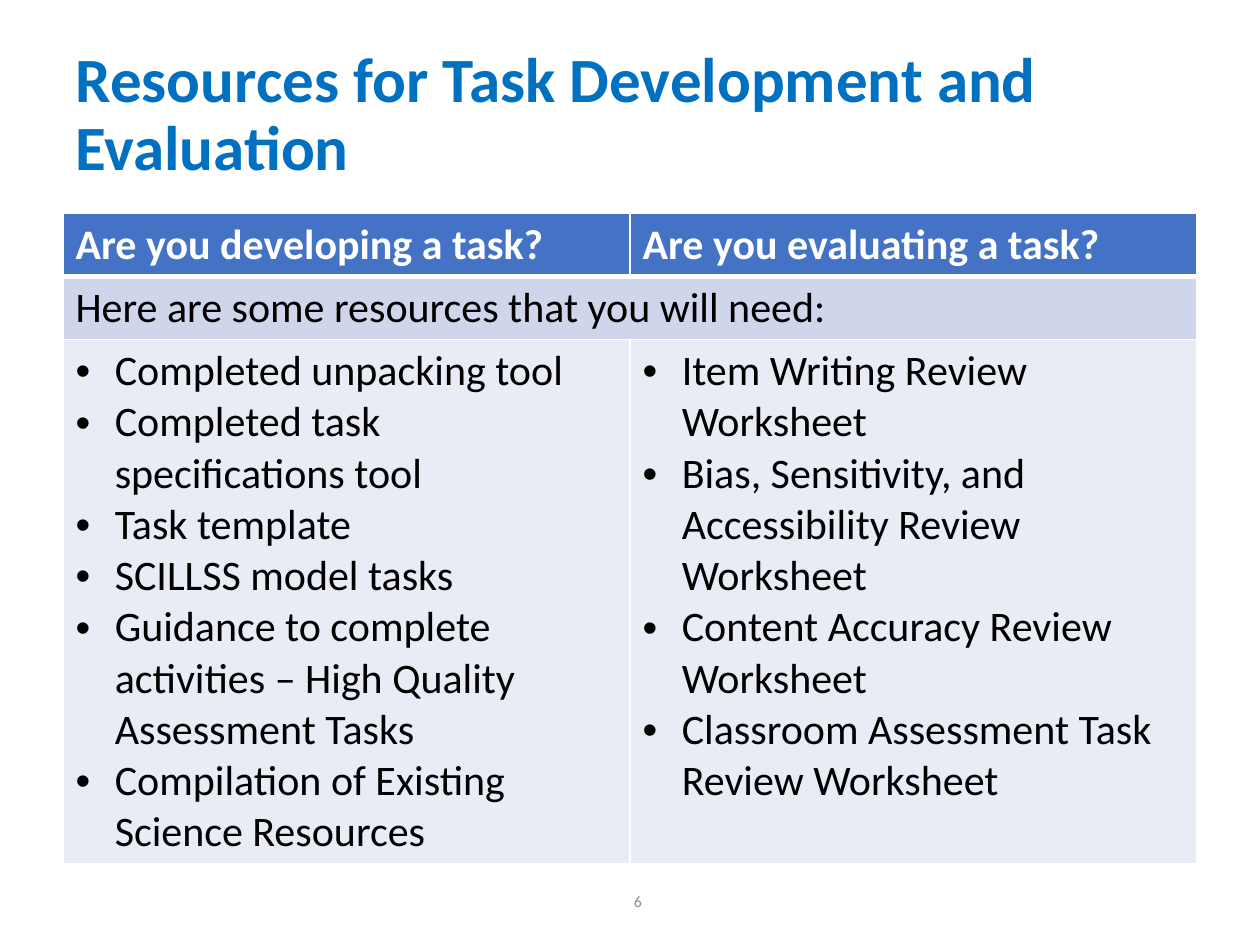
"""Builds the slide that lists resources for task development and evaluation."""
from dataclasses import dataclass

from lxml.etree import SubElement
from pptx import Presentation
from pptx.dml.color import RGBColor
from pptx.enum.text import MSO_ANCHOR as Anchor, MSO_AUTO_SIZE as AutoSize, PP_ALIGN as Align
from pptx.oxml.ns import qn
from pptx.util import Cm, Pt

FONT = "Calibri"
COLORS = {
    "title": "0070C0",
    "header": "4472C4",
    "band": "CFD5EA",
    "body": "E9EBF5",
    "white": "FFFFFF",
    "black": "000000",
    "number": "8C8C8C",
}
BULLET_INDENT = Cm(0.79)
ROW_HEIGHTS = (Cm(1.27), Cm(1.27), Cm(10.58))


@dataclass(frozen=True)
class RowStyle:
    fill: str
    color: str
    bold: bool = False
    bulleted: bool = False
    bottom_border: float = 1


@dataclass(frozen=True)
class TableRow:
    style: RowStyle
    cells: tuple[tuple[str, ...], ...]


ROWS = (
    TableRow(
        RowStyle("header", "white", bold=True, bottom_border=3),
        (("Are you developing a task?",), ("Are you evaluating a task?",)),
    ),
    TableRow(RowStyle("band", "black"), (("Here are some resources that you will need:",),)),
    TableRow(
        RowStyle("body", "black", bulleted=True),
        (
            (
                "Completed unpacking tool",
                "Completed task specifications tool",
                "Task template",
                "SCILLSS model tasks",
                "Guidance to complete activities – High Quality Assessment Tasks",
                "Compilation of Existing Science Resources",
            ),
            (
                "Item Writing Review Worksheet",
                "Bias, Sensitivity, and Accessibility Review Worksheet",
                "Content Accuracy Review Worksheet",
                "Classroom Assessment Task Review Worksheet",
            ),
        ),
    ),
)


def format_runs(paragraph, size: float, color: str, bold: bool = False) -> None:
    for run in paragraph.runs:
        run.font.name = FONT
        run.font.size = Pt(size)
        run.font.bold = bold
        run.font.color.rgb = RGBColor.from_string(COLORS[color])


def add_bullet(paragraph) -> None:
    properties = paragraph._p.get_or_add_pPr()
    properties.set("marL", str(BULLET_INDENT))
    properties.set("indent", str(-BULLET_INDENT))
    SubElement(properties, qn("a:buFont"), typeface="Arial")
    SubElement(properties, qn("a:buChar"), char="•")


def add_borders(cell, bottom: float, top: float) -> None:
    properties = cell._tc.get_or_add_tcPr()
    for side, width in (("L", 1), ("R", 1), ("T", top), ("B", bottom)):
        line = SubElement(properties, qn(f"a:ln{side}"), w=str(Pt(width)))
        fill = SubElement(line, qn("a:solidFill"))
        SubElement(fill, qn("a:srgbClr"), val=COLORS["white"])


def write_cell(cell, lines: tuple[str, ...], style: RowStyle) -> None:
    cell.text_frame.text = "\n".join(lines)
    for paragraph in cell.text_frame.paragraphs:
        if style.bulleted:
            add_bullet(paragraph)
        format_runs(paragraph, 24, style.color, style.bold)


def add_title(slide, text: str) -> None:
    title = slide.shapes.title
    title.left, title.top, title.width, title.height = Cm(1.27), Cm(0.76), Cm(22.86), Cm(3.18)
    frame = title.text_frame
    frame.text = text
    frame.auto_size = AutoSize.NONE
    frame.vertical_anchor = Anchor.MIDDLE
    paragraph = frame.paragraphs[0]
    paragraph.alignment = Align.LEFT
    paragraph.line_spacing = 0.9
    format_runs(paragraph, 36, "title", bold=True)


def add_resource_table(slide, rows: tuple[TableRow, ...]) -> None:
    table = slide.shapes.add_table(
        len(rows), 2, Cm(1.27), Cm(4.3), Cm(22.86), sum(ROW_HEIGHTS)
    ).table
    top_border = 1
    for index, (row, height) in enumerate(zip(rows, ROW_HEIGHTS)):
        table.rows[index].height = height
        cells = list(table.rows[index].cells)
        if len(row.cells) == 1:
            cells[0].merge(cells[1])
        for cell in cells:
            add_borders(cell, row.style.bottom_border, top_border)
            cell.fill.solid()
            cell.fill.fore_color.rgb = RGBColor.from_string(COLORS[row.style.fill])
        for cell, lines in zip(cells, row.cells):
            write_cell(cell, lines, row.style)
        top_border = row.style.bottom_border


def add_slide_number(slide, number: str) -> None:
    box = slide.shapes.add_textbox(Cm(7.47), Cm(17.65), Cm(5.72), Cm(1.02))
    frame = box.text_frame
    frame.word_wrap = True
    frame.vertical_anchor = Anchor.MIDDLE
    frame.text = number
    frame.paragraphs[0].alignment = Align.RIGHT
    format_runs(frame.paragraphs[0], 9, "number")


def main() -> None:
    presentation = Presentation()
    presentation.slide_width, presentation.slide_height = Cm(25.4), Cm(19.05)
    slide = presentation.slides.add_slide(presentation.slide_layouts[5])
    add_slide_number(slide, "6")
    add_title(slide, "Resources for Task Development and Evaluation")
    add_resource_table(slide, ROWS)
    presentation.save("out.pptx")


if __name__ == "__main__":
    main()
